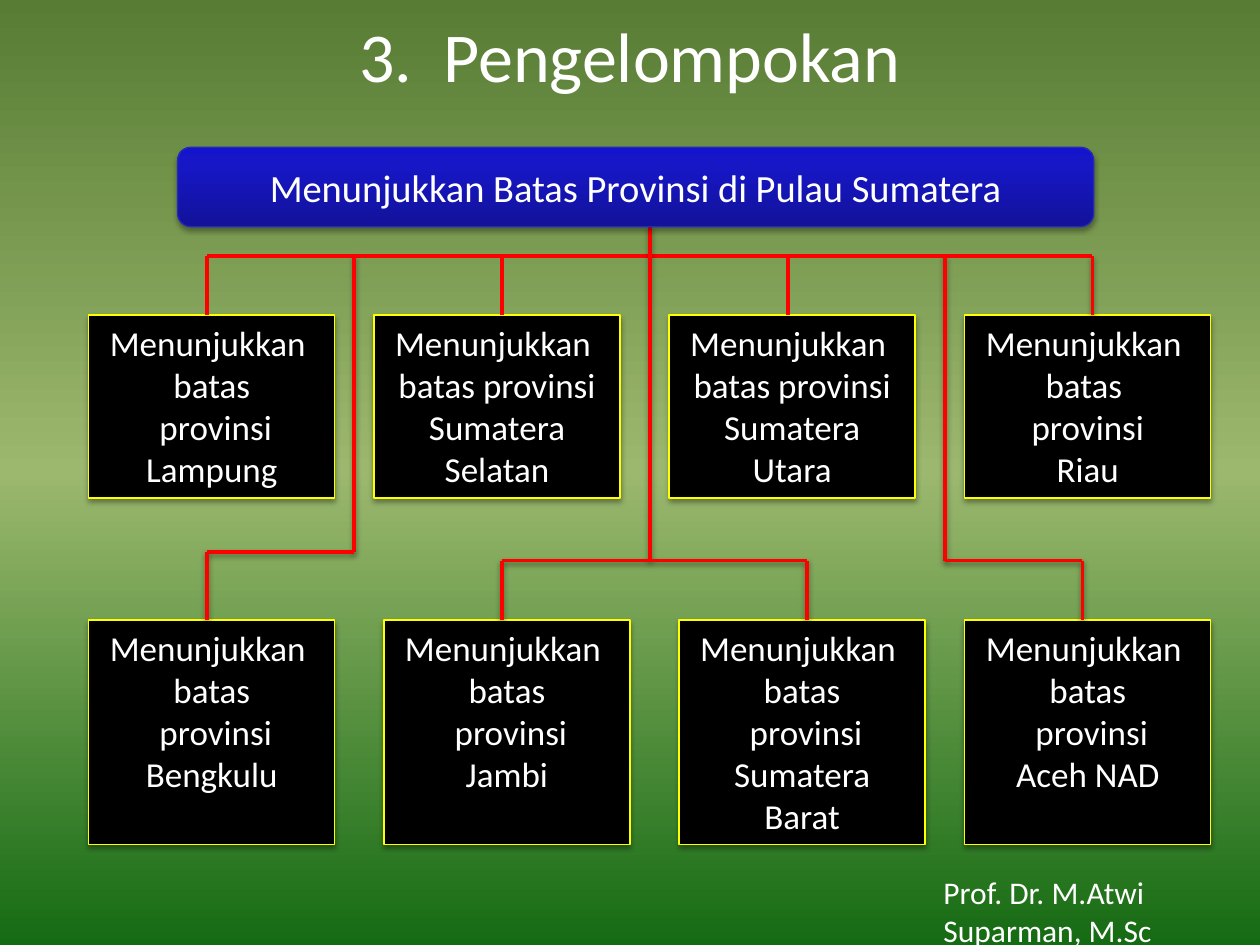
from copy import deepcopy
from typing import NamedTuple

from pptx import Presentation
from pptx.dml.color import RGBColor
from pptx.enum.shapes import MSO_CONNECTOR as Connector, MSO_SHAPE as Shape
from pptx.enum.text import MSO_ANCHOR as Anchor, PP_ALIGN as Align
from pptx.oxml import parse_xml
from pptx.oxml.ns import nsdecls, qn
from pptx.util import Cm, Pt

FONT = "Calibri"
WHITE, BLACK, RED, YELLOW = "FFFFFF", "000000", "FF0000", "FFFF00"
BOX_WIDTH = 4.96


class Box(NamedTuple):
    left: float
    lines: list[str]


class Row(NamedTuple):
    top: float
    height: float
    boxes: list[Box]


class Line(NamedTuple):
    x1: float
    y1: float
    x2: float
    y2: float
    width: float = 2
    shadow: bool = True


def color(value: str) -> RGBColor:
    return RGBColor.from_string(value)


def set_effects(shape, blur: float = 0, distance: float = 0, alpha: int = 0) -> None:
    """Give a shape a downward shadow, or none when alpha is zero."""
    shadow = (
        f'<a:outerShdw blurRad="{Pt(blur)}" dist="{Pt(distance)}" dir="5400000" rotWithShape="0">'
        f'<a:srgbClr val="{BLACK}"><a:alpha val="{alpha * 1000}"/></a:srgbClr></a:outerShdw>'
    ) if alpha else ""
    effects = parse_xml(f'<a:effectLst {nsdecls("a")}>{shadow}</a:effectLst>')
    shape.element.spPr.append(effects)


def set_gradient(fill, element, angle: int, stops: list[tuple[float, str]]) -> None:
    fill.gradient()
    fill.gradient_angle = angle
    stop_list = element.find(".//" + qn("a:gsLst"))
    stop_list.append(deepcopy(stop_list[0]))
    for stop, (position, value) in zip(fill.gradient_stops, stops):
        stop.position = position
        stop.color.rgb = color(value)


def write(shape, lines: list[str], size: int, align: Align = Align.CENTER,
          anchor: Anchor = Anchor.TOP) -> None:
    frame = shape.text_frame
    frame.word_wrap = True
    frame.vertical_anchor = anchor
    frame.text = "\n".join(lines)
    for paragraph in frame.paragraphs:
        paragraph.alignment = align
        paragraph.font.size = Pt(size)
        paragraph.font.name = FONT
        paragraph.font.color.rgb = color(WHITE)


def add_panel(slide, kind: Shape, left: float, top: float, width: float, height: float,
              outline: str):
    shape = slide.shapes.add_shape(kind, Cm(left), Cm(top), Cm(width), Cm(height))
    shape.line.color.rgb = color(outline)
    shape.line.width = Pt(0.75)
    return shape


def add_box(slide, row: Row, box: Box) -> None:
    shape = add_panel(slide, Shape.RECTANGLE, box.left, row.top, BOX_WIDTH, row.height, YELLOW)
    shape.fill.solid()
    shape.fill.fore_color.rgb = color(BLACK)
    set_effects(shape, 3.1, 1.8, 35)
    write(shape, ["Menunjukkan ", *box.lines], 20)


def add_line(slide, line: Line) -> None:
    connector = slide.shapes.add_connector(
        Connector.STRAIGHT, Cm(line.x1), Cm(line.y1), Cm(line.x2), Cm(line.y2))
    connector.line.color.rgb = color(RED)
    connector.line.width = Pt(line.width)
    if line.shadow:
        set_effects(connector, 3.1, 1.6, 38)
    else:
        set_effects(connector)


def add_label(slide, left: float, top: float, width: float, height: float, text: str,
              size: int, align: Align, anchor: Anchor) -> None:
    label = slide.shapes.add_textbox(Cm(left), Cm(top), Cm(width), Cm(height))
    write(label, [text], size, align, anchor)


SPLIT = ["batas", " provinsi"]
ROWS = [
    Row(6.35, 3.69, [
        Box(1.79, [*SPLIT, "Lampung"]),
        Box(7.54, ["batas provinsi", "Sumatera Selatan"]),
        Box(13.49, ["batas provinsi", "Sumatera Utara"]),
        Box(19.45, ["batas ", "provinsi", "Riau"]),
    ]),
    Row(12.5, 4.53, [
        Box(1.79, [*SPLIT, "Bengkulu"]),
        Box(7.74, [*SPLIT, "Jambi"]),
        Box(13.69, [*SPLIT, "Sumatera", "Barat"]),
        Box(19.45, [*SPLIT, "Aceh NAD"]),
    ]),
]

# Heights of the horizontal branches and tops of the two rows
TRUNK, LEFT_BRANCH, BRANCH = 5.16, 11.13, 11.3
UPPER, LOWER = (row.top for row in ROWS)
LINES = [
    # Trunk and drops to the upper row
    Line(4.17, TRUNK, 22.02, TRUNK, 2.25, False),
    *[Line(x, UPPER, x, TRUNK, 2.25, False) for x in (4.17, 10.12, 15.88)],
    Line(22.02, TRUNK, 22.02, UPPER),
    # Middle branch
    Line(13.1, 4.55, 13.1, BRANCH),
    Line(10.12, BRANCH, 16.27, BRANCH),
    # Right branch
    Line(19.05, TRUNK, 19.05, BRANCH),
    Line(19.05, BRANCH, 21.82, BRANCH),
    # Left branch
    Line(7.14, TRUNK, 7.14, LEFT_BRANCH),
    Line(7.14, LEFT_BRANCH, 4.17, LEFT_BRANCH),
    Line(4.17, LEFT_BRANCH, 4.17, LOWER),
    # Drops to the lower row
    *[Line(x, BRANCH, x, LOWER) for x in (10.12, 16.27, 21.82)],
]


def main() -> None:
    presentation = Presentation()
    presentation.slide_width, presentation.slide_height = Cm(25.4), Cm(19.05)
    slide = presentation.slides.add_slide(presentation.slide_layouts[6])
    set_gradient(slide.background.fill, slide.element, 270,
                 [(0, "587C34"), (0.5, "9CB86E"), (1, "156B13")])

    # Title
    add_label(slide, 1.9, 0, 21.59, 2.18, "3.  Pengelompokan", 40, Align.CENTER, Anchor.MIDDLE)

    # Province boxes and the lines that join them
    for row in ROWS:
        for box in row.boxes:
            add_box(slide, row, box)
    for line in LINES:
        add_line(slide, line)

    # Author
    add_label(slide, 18.77, 17.48, 6.63, 1.02, "Prof. Dr. M.Atwi Suparman, M.Sc", 18,
              Align.LEFT, Anchor.TOP)

    # Main goal
    goal = add_panel(slide, Shape.ROUNDED_RECTANGLE, 3.58, 2.97, 18.47, 1.6, "2929B8")
    set_gradient(goal.fill, goal.element, 90,
                 [(0, "12129A"), (0.8, "1717C8"), (1, "1414CC")])
    set_effects(goal, 3.1, 1.8, 35)
    write(goal, ["Menunjukkan Batas Provinsi di Pulau Sumatera"], 22, anchor=Anchor.MIDDLE)

    presentation.save("out.pptx")


if __name__ == "__main__":
    main()
